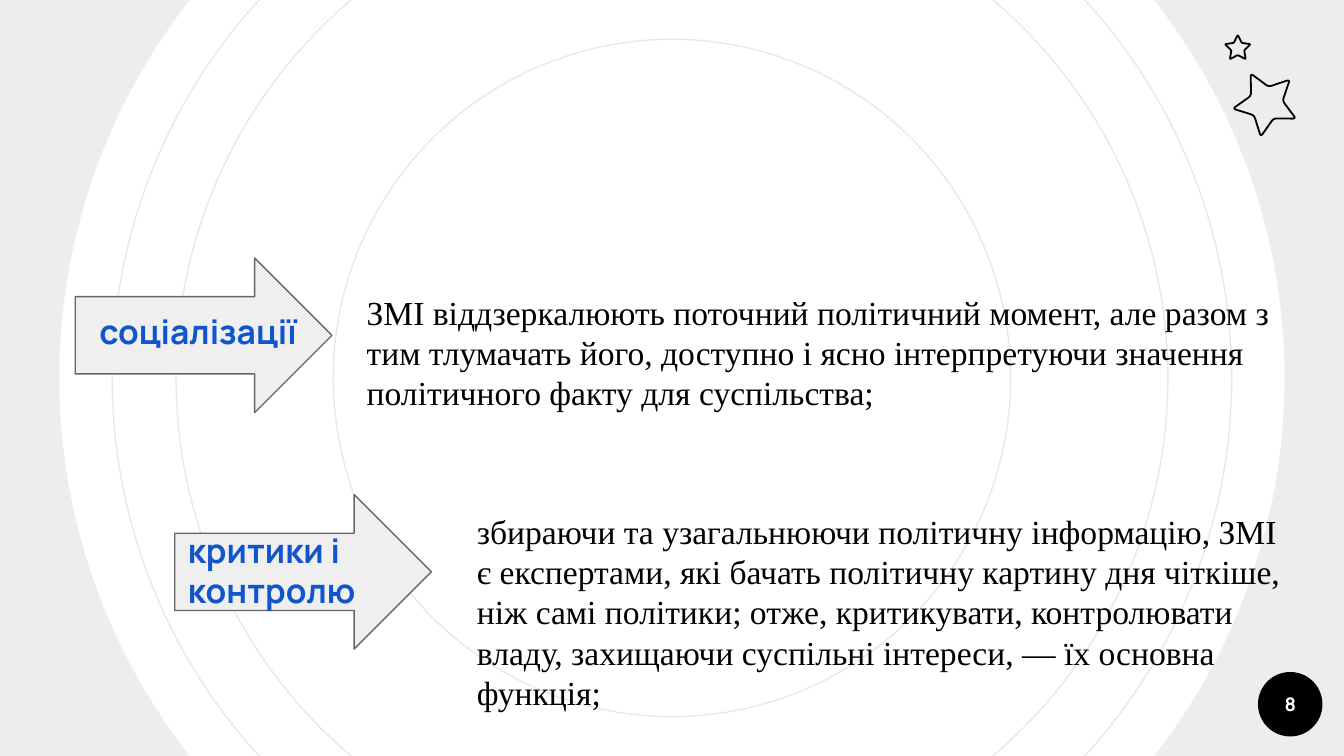
"""Build a slide on two functions of the mass media."""
import math

from lxml import etree
from pptx import Presentation
from pptx import util as u
from pptx.dml.color import RGBColor
from pptx.enum import shapes, text
from pptx.oxml.ns import qn

BLACK, WHITE = "000000", "FFFFFF"
WIDTH = 10
HEIGHT = WIDTH * 9 / 16
RING_DIAMETERS = (8.33, 7.38, 5.04)
STARS = ((9.42, 0.77, 0.25, 45), (9.21, 0.36, 0.1, 0))
ARROWS = ((0.56, 1.92), (1.3, 3.68))
BADGE = (9.36, 5, 0.48, 0.48)
LABEL = {"name": "Manrope", "size": u.Pt(18), "bold": True}
BODY = {"name": "Times New Roman", "size": u.Pt(18)}
NUMBER = {"name": "Manrope", "size": u.Pt(10), "bold": True}
TEXTS = (
    ((2.63, 2.07, 7.12, 0.94), BODY, BLACK,
     "ЗМІ віддзеркалюють поточний політичний момент, але разом з тим тлумачать "
     "його, доступно і ясно інтерпретуючи значення політичного факту для суспільства;"),
    ((3.45, 3.7, 6.29, 0.94), BODY, BLACK,
     "збираючи та узагальнюючи політичну інформацію, ЗМІ є експертами, які бачать "
     "політичну картину дня чіткіше, ніж самі політики; отже, критикувати, "
     "контролювати владу, захищаючи суспільні інтереси, — їх основна функція;"),
    ((0.64, 2.24, 1.91, 0.17), LABEL, "1155CC", "соціалізації"),
    ((1.3, 3.84, 1.72, 0.31), LABEL, "1155CC", "критики і контролю"),
)


def color(value):
    """Return the colour for a hex string."""
    return RGBColor.from_string(value)


def style_shape(shape, fill=None, line=None, width=0.75):
    """Set fill and outline, leaving out whichever is not given."""
    shape.shadow.inherit = False
    if fill:
        shape.fill.solid()
        shape.fill.fore_color.rgb = color(fill)
    else:
        shape.fill.background()
    if line:
        shape.line.color.rgb = color(line)
        shape.line.width = u.Pt(width)
    else:
        shape.line.fill.background()


def add_preset(page, kind, area, **style):
    """Add a styled preset shape."""
    shape = page.shapes.add_shape(kind, *map(u.Inches, area))
    style_shape(shape, **style)
    return shape


def add_circle(page, diameter, kind=shapes.MSO_SHAPE.OVAL, **style):
    """Add a round shape centred on the page."""
    area = ((WIDTH - diameter) / 2, (HEIGHT - diameter) / 2, diameter, diameter)
    return add_preset(page, kind, area, **style)


def set_opacity(shape, percent):
    """Make a solid fill partly transparent."""
    tone = shape.fill._xPr.find(qn("a:solidFill"))[0]
    etree.SubElement(tone, qn("a:alpha")).set("val", str(percent * 1000))


def add_star(page, x, y, radius, tilt):
    """Outline a five-pointed star with rounded corners."""
    corners = []
    for step in range(10):
        reach = radius * (0.5 if step % 2 else 1)
        angle = math.radians(tilt + 36 * step)
        corners.append((x + reach * math.sin(angle), y - reach * math.cos(angle)))
    points = []
    for index, corner in enumerate(corners):
        before, after = corners[index - 1], corners[(index + 1) % 10]
        for part in (0, 0.25, 0.5, 0.75, 1):
            back, ahead = 0.15 * (1 - part) ** 2, 0.15 * part ** 2
            points.append(tuple(
                u.Inches(c + back * (b - c) + ahead * (a - c))
                for b, c, a in zip(before, corner, after)))
    builder = page.shapes.build_freeform(*points[0])
    builder.add_line_segments(points[1:], close=True)
    style_shape(builder.convert_to_shape(), line=BLACK, width=0.96)


def add_text(page, area, font, tone, wording,
             align=text.PP_ALIGN.LEFT, anchor=text.MSO_ANCHOR.TOP):
    """Add a text box with one formatted paragraph."""
    frame = page.shapes.add_textbox(*map(u.Inches, area)).text_frame
    settings = {"word_wrap": True, "vertical_anchor": anchor}
    settings.update({f"margin_{side}": u.Inches(0.1)
                     for side in ("left", "right", "top", "bottom")})
    for name, value in settings.items():
        setattr(frame, name, value)
    para = frame.paragraphs[0]
    para.alignment = align
    span = para.add_run()
    span.text = wording
    for name, value in font.items():
        setattr(span.font, name, value)
    span.font.color.rgb = color(tone)


def main():
    """Build and save the deck."""
    deck = Presentation()
    deck.slide_width, deck.slide_height = u.Inches(WIDTH), u.Inches(HEIGHT)
    page = deck.slides.add_slide(deck.slide_layouts[6])
    page.background.fill.solid()
    page.background.fill.fore_color.rgb = color(WHITE)

    for diameter in RING_DIAMETERS:
        add_circle(page, diameter, line="E8E8E8")
    frame_ring = add_circle(page, 11.54, shapes.MSO_SHAPE.DONUT, fill=BLACK)
    frame_ring.adjustments[0] = 0.105
    set_opacity(frame_ring, 7)

    add_preset(page, shapes.MSO_SHAPE.OVAL, BADGE, fill=BLACK)
    for star in STARS:
        add_star(page, *star)
    add_text(page, BADGE, NUMBER, WHITE, "8",
             text.PP_ALIGN.CENTER, text.MSO_ANCHOR.MIDDLE)
    for left, top in ARROWS:
        add_preset(page, shapes.MSO_SHAPE.RIGHT_ARROW, (left, top, 1.91, 1.15),
                   fill="EFEFEF", line="666666")
    for entry in TEXTS:
        add_text(page, *entry)
    deck.save("out.pptx")


if __name__ == "__main__":
    main()
